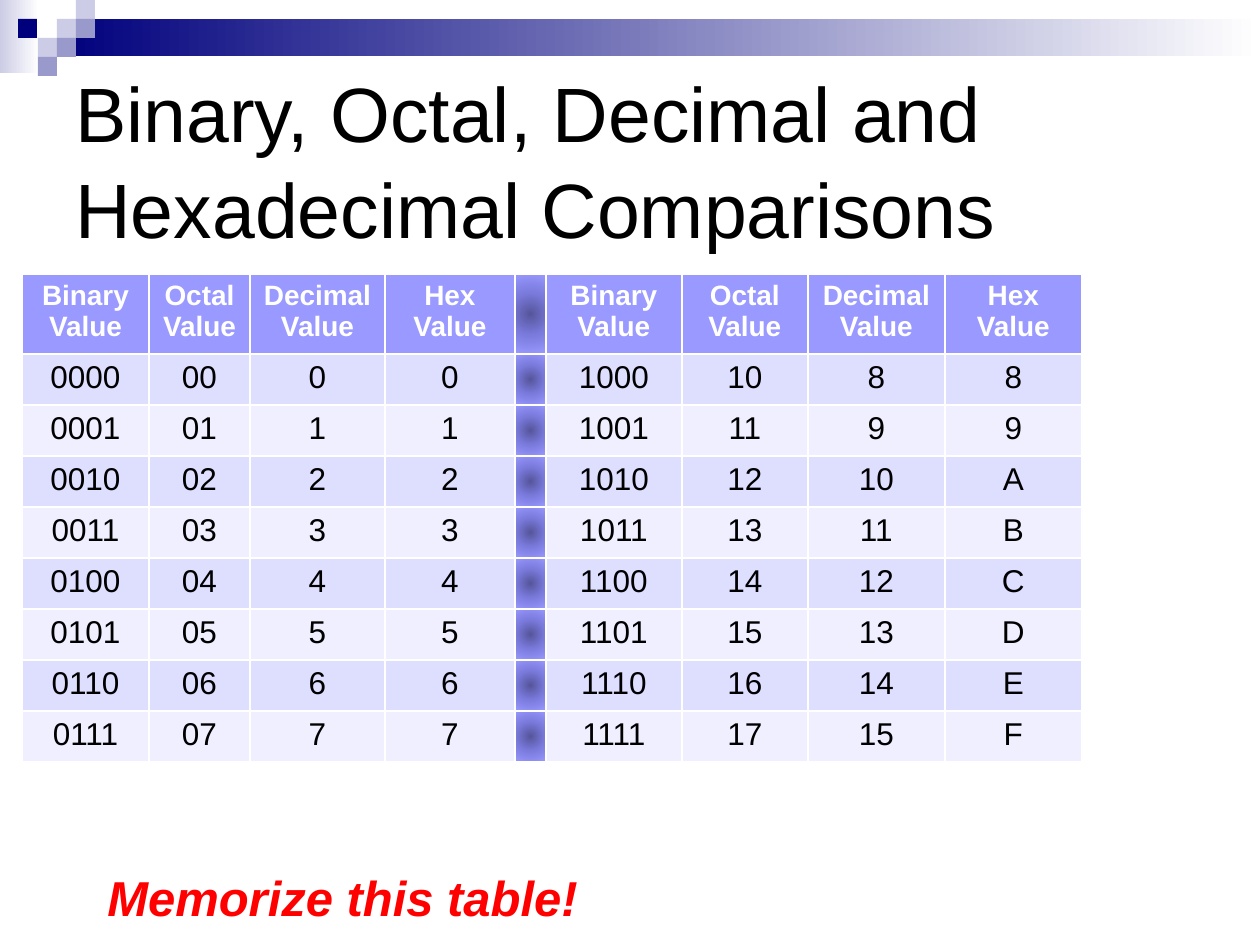
"""Build a slide comparing binary, octal, decimal and hexadecimal values."""
from dataclasses import dataclass

import lxml.etree
import pptx
import pptx.dml.color
import pptx.enum.shapes
import pptx.enum.text
import pptx.oxml
import pptx.oxml.ns
import pptx.util

SCALE = 914400 / 126
UNIT = 19
HEX = {
    "navy": "00007D", "mid": "9999CC", "pale": "CCCCE6", "white": "FFFFFF",
    "black": "000000", "red": "FF0000", "head": "9999FF", "odd": "DEDEFF",
    "even": "EFEFFF", "core": "56569C", "ring": "7B7BDD",
}
WIDTHS = (127, 101, 135, 130, 31, 136, 126, 137, 137)
GAP = 4
HEADS = ["Binary Value", "Octal Value", "Decimal Value", "Hex Value"]
TITLE = {"size": pptx.util.Pt(44), "bold": False, "italic": False}
NOTE = {"size": pptx.util.Pt(28), "bold": True, "italic": True}
HEAD = {"size": pptx.util.Pt(16), "bold": True}
BODY = {"size": pptx.util.Pt(18), "bold": False}


@dataclass
class Box:
    left: int
    top: int
    width: int
    height: int

    def emu(self) -> list[int]:
        return [px(n) for n in (self.left, self.top, self.width, self.height)]


@dataclass
class Block:
    box: Box
    tone: str
    fade: bool = False


def tile(col: int, row: int, tone: str) -> Block:
    return Block(Box(col * UNIT, row * UNIT, UNIT, UNIT), tone)


BLOCKS = [
    Block(Box(0, 0, 39, 73), "pale", True),
    Block(Box(57, 19, 1203, 37), "navy", True),
    tile(3, 1, "pale"), tile(4, 0, "pale"), tile(4, 1, "mid"),
    tile(2, 2, "pale"), Block(Box(18, 19, UNIT, UNIT), "navy"),
    tile(3, 2, "mid"), tile(2, 3, "mid"),
]


def px(n: int) -> int:
    return round(n * SCALE)


def rgb(tone: str) -> pptx.dml.color.RGBColor:
    return pptx.dml.color.RGBColor.from_string(HEX[tone])


def style(font, tone: str, form: dict) -> None:
    for key, value in {"name": "Arial", **form}.items():
        setattr(font, key, value)
    font.color.rgb = rgb(tone)


def draw(slide, block: Block) -> None:
    kind = pptx.enum.shapes.MSO_SHAPE.RECTANGLE
    shape = slide.shapes.add_shape(kind, *block.box.emu())
    shape.shadow.inherit = False
    shape.line.fill.background()
    if block.fade:
        shape.fill.gradient()
        shape.fill.gradient_angle = 0
        for stop, tone in zip(shape.fill.gradient_stops, (block.tone, "white")):
            stop.color.rgb = rgb(tone)
    else:
        shape.fill.solid()
        shape.fill.fore_color.rgb = rgb(block.tone)


def write(slide, box: Box, text: str, tone: str, form: dict, wrap: bool):
    frame = slide.shapes.add_textbox(*box.emu()).text_frame
    frame.word_wrap = wrap
    run = frame.paragraphs[0].add_run()
    run.text = text
    style(run.font, tone, form)
    return frame


def glow(cell) -> None:
    stops = "".join(
        f'<a:gs pos="{pos}"><a:srgbClr val="{HEX[tone]}"/></a:gs>'
        for pos, tone in ((0, "core"), (50000, "ring"), (100000, "head"))
    )
    cell._tc.get_or_add_tcPr().append(pptx.oxml.parse_xml(
        f'<a:gradFill {pptx.oxml.ns.nsdecls("a")} rotWithShape="1">'
        f'<a:gsLst>{stops}</a:gsLst><a:path path="circle">'
        '<a:fillToRect l="50000" t="50000" r="50000" b="50000"/>'
        '</a:path></a:gradFill>'
    ))


def fill(cell, text: str, back: str, tone: str, form: dict) -> None:
    cell.fill.solid()
    cell.fill.fore_color.rgb = rgb(back)
    para = cell.text_frame.paragraphs[0]
    para.alignment = pptx.enum.text.PP_ALIGN.CENTER
    run = para.add_run()
    run.text = text
    style(run.font, tone, form)


def bases(n: int) -> list[str]:
    return [f"{n:04b}", f"{n:02o}", str(n), f"{n:X}"]


def grid(slide) -> None:
    rows = [HEADS + [""] + HEADS]
    rows += [bases(n) + [""] + bases(n + 8) for n in range(8)]
    box = Box(22, 274, sum(WIDTHS), 74 + 8 * 51)
    table = slide.shapes.add_table(len(rows), len(WIDTHS), *box.emu()).table
    for col, width in zip(table.columns, WIDTHS):
        col.width = px(width)
    for r, row in enumerate(rows):
        table.rows[r].height = px(51 if r else 74)
        look = ("odd" if r % 2 else "even", "black", BODY)
        if r == 0:
            look = ("head", "white", HEAD)
        for c, text in enumerate(row):
            if c == GAP:
                glow(table.cell(r, c))
            else:
                fill(table.cell(r, c), text, *look)


def main() -> None:
    deck = pptx.Presentation()
    deck.slide_width, deck.slide_height = px(1260), px(945)
    slide = deck.slides.add_slide(deck.slide_layouts[6])
    for block in BLOCKS:
        draw(slide, block)
    title = write(slide, Box(63, 63, 1134, 189),
                  "Binary, Octal, Decimal and Hexadecimal Comparisons",
                  "black", TITLE, True)
    title.vertical_anchor = pptx.enum.text.MSO_ANCHOR.MIDDLE
    title.paragraphs[0].line_spacing = 1.04
    grid(slide)
    note = write(slide, Box(95, 861, 501, 72), "Memorize this table!",
                 "red", NOTE, False)
    note.auto_size = pptx.enum.text.MSO_AUTO_SIZE.SHAPE_TO_FIT_TEXT
    deck.save("out.pptx")


if __name__ == "__main__":
    main()
